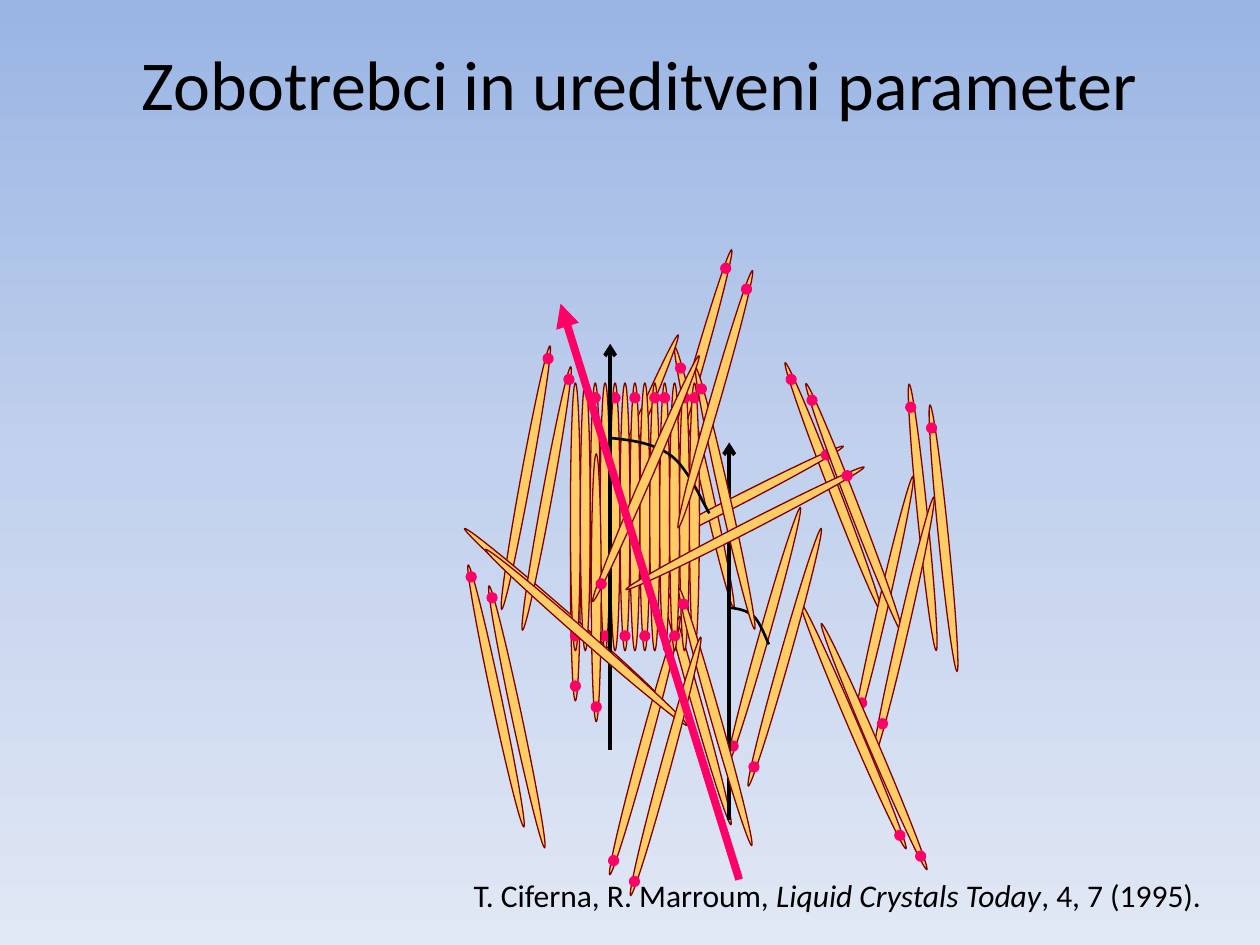
from copy import deepcopy
from dataclasses import dataclass

from lxml.etree import SubElement
from pptx import Presentation
from pptx.dml.color import RGBColor
from pptx.enum.shapes import MSO_CONNECTOR, MSO_SHAPE
from pptx.enum.text import MSO_ANCHOR, MSO_AUTO_SIZE, PP_ALIGN
from pptx.oxml.ns import qn
from pptx.util import Cm, Pt


@dataclass(frozen=True)
class Theme:
    """Colours, type sizes and line widths of the slide."""
    font: str = "Calibri"
    title_size: int = 40
    citation_size: int = 18
    black: str = "000000"
    wood: str = "FFCC66"
    wood_edge: str = "800000"
    mark: str = "FF0066"
    sky: tuple = ("9AB5E4", "C2D1ED", "E1E8F5")
    outline: float = 0.75
    axis: float = 2.25
    arc: float = 1.5
    director: float = 4.5


THEME = Theme()
STICK_WIDTH, STICK_LENGTH, DOT_SIZE = 0.2, 5.4, 0.2

LOOSE_STICKS = [
    (2.1, 3.8, 0), (4.7, 2.0, 347.3), (1.1, 2.0, 10.4), (1.9, 4.8, 311.1),
    (3.1, 1.6, 23.4), (4.5, 6.4, 344.2), (7.3, 2.2, 338.9), (5.9, 5.2, 15.8),
    (8.3, 4.6, 13), (0.5, 6.4, 348), (4.5, 0, 16.1), (3.5, 7.4, 15.2),
    (9.1, 2.8, 354.2), (5.1, 2.6, 242.8), (7.7, 7.0, 156.8),
]
LOOSE_DOTS = [
    (1.55, 2.2), (2.1, 8.8), (0, 6.6), (2.2, 6.32), (5.13, 0.38),
    (7.16, 4.14), (3.86, 6.73), (2.87, 12.32), (5.28, 10.01), (8.64, 11.81),
    (6.45, 2.62), (7.87, 9.14), (8.86, 3.18), (4.22, 2.39),
]
BUNDLE_DIRECTIONS = "DDUDUDUDUUDUU"
ARC_CURVES = [
    ((0, 0), (0.24, 0.03), (0.47, 0.08), (0.63, 0.25)),
    ((0.63, 0.25), (0.79, 0.42), (0.94, 0.87), (1, 1)),
]


def color(value):
    """Turn a hex string into a colour."""
    return RGBColor.from_string(value)


def set_background(slide):
    """Fill the slide with a vertical three-stop gradient."""
    fill = slide.background.fill
    fill.gradient()
    fill.gradient_angle = 270
    stop_list = slide.element.find(".//" + qn("a:gsLst"))
    stop_list.insert(1, deepcopy(stop_list[0]))
    for stop, position, value in zip(fill.gradient_stops, (0, 0.5, 1), THEME.sky):
        stop.position = position
        stop.color.rgb = color(value)


def format_run(run, size):
    """Apply the theme font to a run."""
    run.font.name = THEME.font
    run.font.size = Pt(size)
    run.font.color.rgb = color(THEME.black)


def add_title(slide, left, top, width, height):
    """Place and format the title placeholder."""
    title = slide.shapes.title
    title.left, title.top, title.width, title.height = map(Cm, (left, top, width, height))
    frame = title.text_frame
    frame.text = "Zobotrebci in ureditveni parameter"
    frame.vertical_anchor = MSO_ANCHOR.MIDDLE
    paragraph = frame.paragraphs[0]
    paragraph.alignment = PP_ALIGN.CENTER
    format_run(paragraph.runs[0], THEME.title_size)


def add_ellipse(group, left, top, width, height, fill, line, rotation=0):
    """Add a filled, outlined ellipse."""
    shape = group.shapes.add_shape(
        MSO_SHAPE.OVAL, Cm(left), Cm(top), Cm(width), Cm(height))
    shape.shadow.inherit = False
    shape.rotation = rotation
    shape.fill.solid()
    shape.fill.fore_color.rgb = color(fill)
    shape.line.color.rgb = color(line)
    shape.line.width = Pt(THEME.outline)


def add_stick(group, left, top, rotation=0):
    """Add one toothpick."""
    add_ellipse(group, left, top, STICK_WIDTH, STICK_LENGTH,
                THEME.wood, THEME.wood_edge, rotation)


def add_dot(group, left, top):
    """Add the mark at one end of a toothpick."""
    add_ellipse(group, left, top, DOT_SIZE, DOT_SIZE, THEME.mark, THEME.mark)


def add_loose_sticks(slide, left, top):
    """Draw the scattered toothpicks with their marks."""
    group = slide.shapes.add_group_shape()
    for x, y, rotation in LOOSE_STICKS:
        add_stick(group, left + x, top + y, rotation)
    for x, y in LOOSE_DOTS:
        add_dot(group, left + x, top + y)


def add_bundle(slide, left, top):
    """Draw the aligned toothpicks, marked at the upper or lower end."""
    group = slide.shapes.add_group_shape()
    for index, direction in enumerate(BUNDLE_DIRECTIONS):
        x = left + index * STICK_WIDTH
        add_stick(group, x, top)
        inset = 0.2 if direction == "U" else STICK_LENGTH - 0.4
        add_dot(group, x, top + inset)


def add_arrow(shapes, start, end, value, width, head):
    """Add a straight line with an arrowhead at its end."""
    arrow = shapes.add_connector(MSO_CONNECTOR.STRAIGHT, *map(Cm, start + end))
    arrow.line.color.rgb = color(value)
    arrow.line.width = Pt(width)
    SubElement(arrow.line._get_or_add_ln(), qn("a:tailEnd"), type=head)
    SubElement(arrow.element.spPr, qn("a:effectLst"))


def curve_point(curve, t):
    """Return the point of a cubic curve at parameter t."""
    weights = ((1 - t) ** 3, 3 * t * (1 - t) ** 2, 3 * t ** 2 * (1 - t), t ** 3)
    return tuple(sum(w * p[axis] for w, p in zip(weights, curve)) for axis in (0, 1))


def add_axis(slide, left, top, length, arc_top, arc_width, arc_height):
    """Draw an upward axis and the angle arc that starts on it."""
    group = slide.shapes.add_group_shape()
    add_arrow(group.shapes, (left, top + length), (left, top),
              THEME.black, THEME.axis, "arrow")
    points = []
    for curve in ARC_CURVES:
        for step in range(1, 13):
            x, y = curve_point(curve, step / 12)
            points.append((Cm(left + x * arc_width), Cm(top + arc_top + y * arc_height)))
    builder = group.shapes.build_freeform(Cm(left), Cm(top + arc_top))
    builder.add_line_segments(points, close=False)
    arc = builder.convert_to_shape()
    arc.shadow.inherit = False
    arc.fill.background()
    arc.line.color.rgb = color(THEME.black)
    arc.line.width = Pt(THEME.arc)


def add_citation(slide, left, top, width, height):
    """Write the reference with the journal name in italics."""
    box = slide.shapes.add_textbox(*map(Cm, (left, top, width, height)))
    frame = box.text_frame
    frame.word_wrap = False
    frame.auto_size = MSO_AUTO_SIZE.SHAPE_TO_FIT_TEXT
    parts = [("T. Ciferna, R. Marroum, ", False),
             ("Liquid Crystals Today", True),
             (", 4, 7 (1995).", False)]
    for text, italic in parts:
        run = frame.paragraphs[0].add_run()
        run.text = text
        run.font.italic = italic
        format_run(run, THEME.citation_size)


def main():
    """Build and save the slide."""
    presentation = Presentation()
    presentation.slide_width, presentation.slide_height = Cm(25.4), Cm(19.05)
    slide = presentation.slides.add_slide(presentation.slide_layouts[5])
    set_background(slide)
    add_title(slide, 0.89, 0.71, 24, 1.9)
    add_loose_sticks(slide, 9.4, 4.93)
    add_bundle(slide, 11.5, 7.72)
    add_axis(slide, 12.3, 6.93, 8.18, 1.9, 2, 1.52)
    add_axis(slide, 14.7, 8.92, 7.62, 3.33, 0.8, 0.74)
    add_loose_sticks(slide, 9.82, 5.35)
    add_citation(slide, 9.3, 17.53, 15.34, 1.02)
    add_arrow(slide.shapes, (14.9, 17.73), (11.3, 6.12),
              THEME.mark, THEME.director, "triangle")
    presentation.save("out.pptx")


if __name__ == "__main__":
    main()
